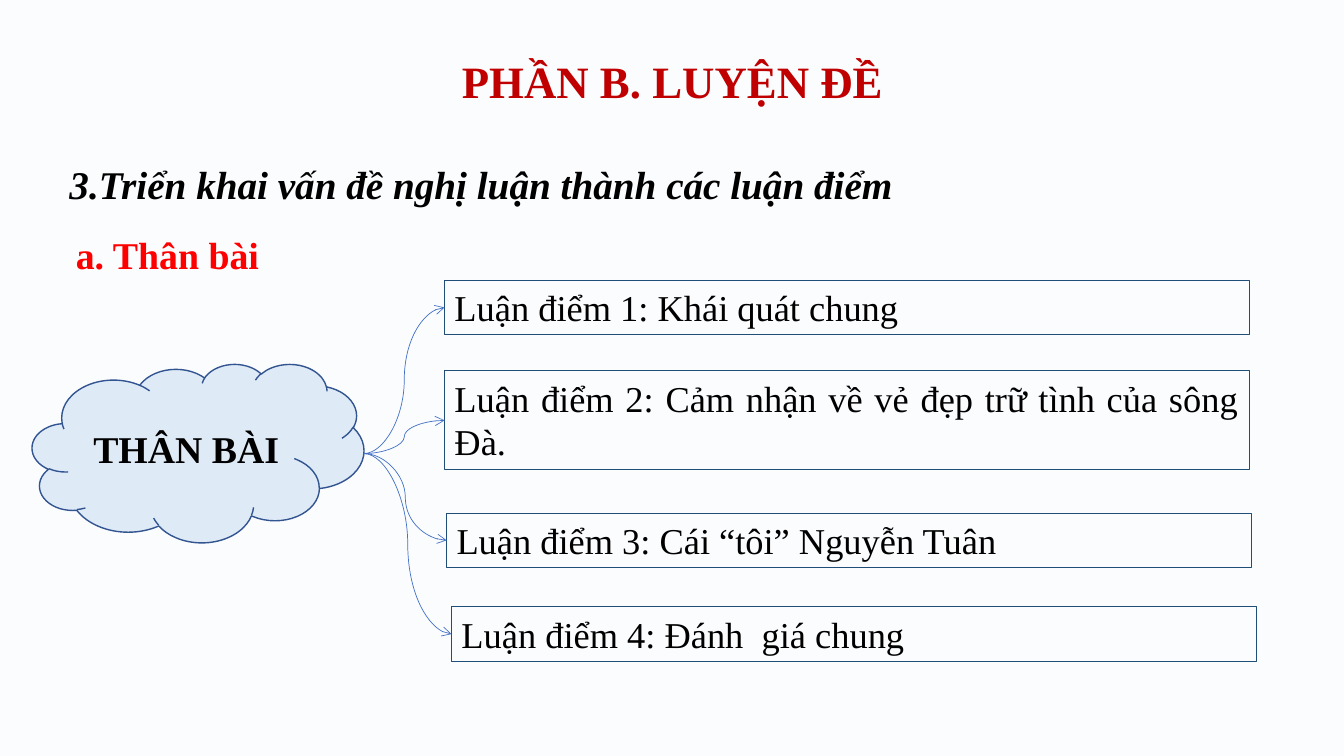
import pptx
import pptx.util
import pptx.dml.color
import pptx.enum.shapes
import pptx.enum.text
import pptx.oxml.ns
import lxml.etree

SHAPE = pptx.enum.shapes.MSO_SHAPE
ALIGN = pptx.enum.text.PP_ALIGN
ANCHOR = pptx.enum.text.MSO_ANCHOR
COLORS = {
    "background": "FBFCFE", "title": "C00000", "heading": "FF0000",
    "text": "000000", "box": "1F4E79", "cloud": "DEEBF7",
    "cloud_line": "325491", "arrow": "4472C4",
}
RGB = {name: pptx.dml.color.RGBColor.from_string(c) for name, c in COLORS.items()}

prs = pptx.Presentation()
prs.slide_width = pptx.util.Inches(13.333)
prs.slide_height = pptx.util.Inches(7.5)
COL = prs.slide_width / 100
ROW = prs.slide_height / 100
s = prs.slides.add_slide(prs.slide_layouts[6])
s.background.fill.solid()
s.background.fill.fore_color.rgb = RGB["background"]


def grid(left, top, width, height):
    """Turn columns and rows (hundredths of the slide) into lengths."""
    return [round(v) for v in (left * COL, top * ROW, width * COL, height * ROW)]


def write(sp, text, size, align, color="text", bold=False, italic=False,
          anchor=ANCHOR.TOP, spacing=None, wrap=True):
    tf = sp.text_frame
    tf.word_wrap = wrap
    tf.vertical_anchor = anchor
    p = tf.paragraphs[0]
    p.alignment = align
    p.line_spacing = spacing
    r = p.add_run()
    r.text = text
    r.font.name = "Times New Roman"
    r.font.size = pptx.util.Pt(size)
    r.font.bold = bold
    r.font.italic = italic
    r.font.color.rgb = RGB[color]


# Headings
title = s.shapes.add_textbox(*grid(6.9, 5.33, 86.27, 11.47))
write(title, "PHẦN B. LUYỆN ĐỀ", 32, ALIGN.CENTER, "title", bold=True,
      anchor=ANCHOR.MIDDLE, spacing=0.9)
task = s.shapes.add_textbox(*grid(4.43, 17.47, 89.87, 9.6))
write(task, "3.Triển khai vấn đề nghị luận thành các luận điểm", 28,
      ALIGN.JUSTIFY, bold=True, italic=True, spacing=1.5)
heading = s.shapes.add_textbox(*grid(4.8, 30, 15.3, 7.47))
write(heading, "a. Thân bài", 27, ALIGN.CENTER, "heading", bold=True, wrap=False)

# Cloud
cloud = s.shapes.add_shape(SHAPE.CLOUD, *grid(2.4, 48.13, 24.68, 23.6))
cloud.shadow.inherit = False
cloud.fill.solid()
cloud.fill.fore_color.rgb = RGB["cloud"]
cloud.line.color.rgb = RGB["cloud_line"]
cloud.line.width = pptx.util.Pt(1)
write(cloud, "THÂN BÀI", 27, ALIGN.CENTER, bold=True, anchor=ANCHOR.MIDDLE)

# Arguments, each with an arrow from the cloud
arguments = [
    (33.08, 37.07, 7.2, "Luận điểm 1: Khái quát chung"),
    (33.08, 49.07, 13.07, "Luận điểm 2: Cảm nhận về vẻ đẹp trữ tình của sông Đà."),
    (33.23, 67.87, 7.2, "Luận điểm 3: Cái “tôi” Nguyễn Tuân"),
    (33.6, 80.27, 7.2, "Luận điểm 4: Đánh  giá chung"),
]
for left, top, height, text in arguments:
    box = s.shapes.add_shape(SHAPE.RECTANGLE, *grid(left, top, 59.86, height))
    box.shadow.inherit = False
    box.fill.background()
    box.line.color.rgb = RGB["box"]
    box.line.width = pptx.util.Pt(0.75)
    write(box, text, 26, ALIGN.JUSTIFY)

    arrow = s.shapes.add_connector(
        pptx.enum.shapes.MSO_CONNECTOR.CURVE,
        *grid(27.08, 60, left, top + height / 2))
    arrow.line.color.rgb = RGB["arrow"]
    arrow.line.width = pptx.util.Pt(0.5)
    lxml.etree.SubElement(arrow.line._get_or_add_ln(),
                          pptx.oxml.ns.qn("a:tailEnd"), type="arrow")
    lxml.etree.SubElement(arrow._element.spPr, pptx.oxml.ns.qn("a:effectLst"))

prs.save("out.pptx")
